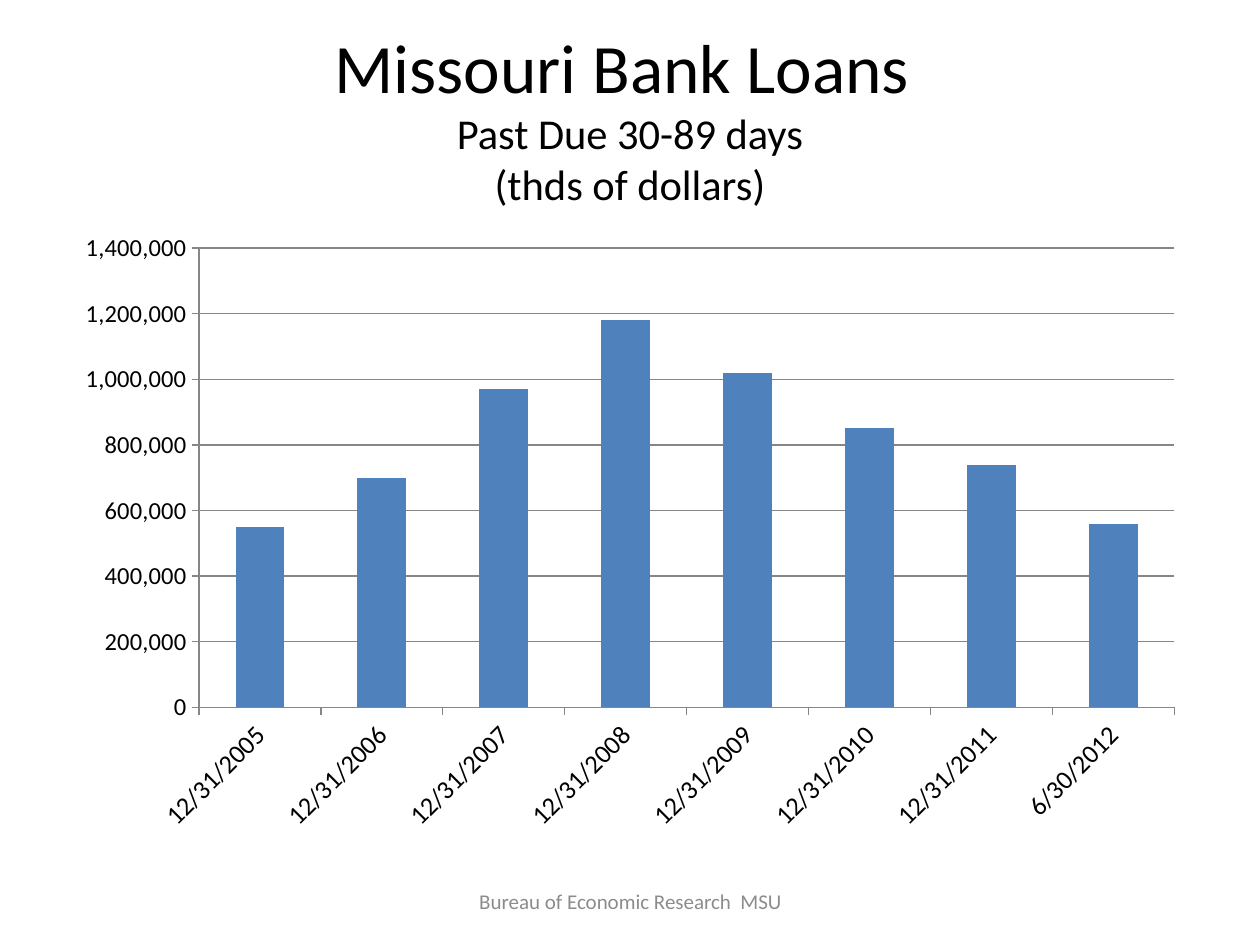
from dataclasses import dataclass

from pptx import Presentation
from pptx.chart.data import CategoryChartData
from pptx.dml.color import RGBColor
from pptx.enum.chart import XL_CHART_TYPE, XL_TICK_MARK
from pptx.enum.text import MSO_ANCHOR, MSO_AUTO_SIZE, PP_ALIGN
from pptx.util import Inches, Pt


@dataclass(frozen=True)
class Theme:
    font: str = "Calibri"
    text: str = "000000"
    muted: str = "8C8C8C"
    bar: str = "4F81BD"
    rule: str = "868686"
    title_size: float = 39.6
    subtitle_size: float = 24.3
    category_size: float = 15
    value_size: float = 14
    footer_size: float = 12


class SlideBuilder:
    def __init__(self, slide, theme):
        self.slide = slide
        self.theme = theme

    def style_font(self, font, size, color):
        font.name = self.theme.font
        font.size = Pt(size)
        font.color.rgb = RGBColor.from_string(color)

    def center(self, frame):
        settings = {
            "word_wrap": True,
            "auto_size": MSO_AUTO_SIZE.NONE,
            "vertical_anchor": MSO_ANCHOR.MIDDLE,
        }
        for name, value in settings.items():
            setattr(frame, name, value)
        paragraph = frame.paragraphs[0]
        paragraph.alignment = PP_ALIGN.CENTER
        return paragraph

    def add_run(self, paragraph, text, size, color):
        run = paragraph.add_run()
        run.text = text
        self.style_font(run.font, size, color)

    def title(self, heading, subtitle_lines, box):
        title = self.slide.shapes.title
        for name, value in zip(("left", "top", "width", "height"), box):
            setattr(title, name, Inches(value))
        paragraph = self.center(title.text_frame)
        self.add_run(paragraph, heading, self.theme.title_size, self.theme.text)
        for line in subtitle_lines:
            paragraph.add_line_break()
            self.add_run(paragraph, line, self.theme.subtitle_size, self.theme.text)

    def footer(self, text, box):
        footer = self.slide.shapes.add_textbox(*map(Inches, box))
        paragraph = self.center(footer.text_frame)
        self.add_run(paragraph, text, self.theme.footer_size, self.theme.muted)

    def style_axis(self, axis, size):
        axis.major_tick_mark = XL_TICK_MARK.OUTSIDE
        axis.minor_tick_mark = XL_TICK_MARK.NONE
        self.style_font(axis.tick_labels.font, size, self.theme.text)
        self.style_rule(axis.format.line)

    def style_rule(self, line):
        line.color.rgb = RGBColor.from_string(self.theme.rule)
        line.width = Pt(0.75)

    def column_chart(self, series_name, loans_by_date, box):
        data = CategoryChartData(number_format="#,##0")
        data.categories = list(loans_by_date)
        data.add_series(series_name, list(loans_by_date.values()))
        chart = self.slide.shapes.add_chart(
            XL_CHART_TYPE.COLUMN_CLUSTERED, *map(Inches, box), data
        ).chart
        chart.has_title = False
        chart.has_legend = False
        self.style_font(chart.font, 10, self.theme.text)

        plot = chart.plots[0]
        plot.gap_width = 150
        plot.vary_by_categories = False
        fill = plot.series[0].format.fill
        fill.solid()
        fill.fore_color.rgb = RGBColor.from_string(self.theme.bar)

        dates, amounts = chart.category_axis, chart.value_axis
        self.style_axis(dates, self.theme.category_size)
        self.style_axis(amounts, self.theme.value_size)
        # Slant the date labels 45 degrees upwards (60000 units per degree).
        date_labels = dates.format.line and dates._element.txPr
        date_labels.bodyPr.set("rot", str(-45 * 60000))
        date_labels.bodyPr.set("vert", "horz")

        scale = {"minimum_scale": 0, "maximum_scale": 1400000, "major_unit": 200000}
        for name, value in scale.items():
            setattr(amounts, name, value)
        amounts.tick_labels.number_format = "#,##0"
        amounts.tick_labels.number_format_is_linked = False
        amounts.has_major_gridlines = True
        self.style_rule(amounts.major_gridlines.format.line)


def main():
    presentation = Presentation()
    presentation.slide_width = Inches(10)
    presentation.slide_height = Inches(7.5)
    title_only = presentation.slide_layouts[5]
    builder = SlideBuilder(presentation.slides.add_slide(title_only), Theme())

    builder.title(
        "Missouri Bank Loans ",
        ["Past Due 30-89 days", "(thds of dollars)"],
        (0.5, 0.3, 9, 1.25),
    )
    past_due_loans = {
        "12/31/2005": 550000,
        "12/31/2006": 700000,
        "12/31/2007": 970000,
        "12/31/2008": 1180000,
        "12/31/2009": 1020000,
        "12/31/2010": 850000,
        "12/31/2011": 740000,
        "6/30/2012": 560000,
    }
    builder.column_chart("Series 1", past_due_loans, (0.5, 1.75, 9, 4.95))
    builder.footer("Bureau of Economic Research  MSU", (3.42, 6.95, 3.17, 0.4))
    presentation.save("out.pptx")


if __name__ == "__main__":
    main()
